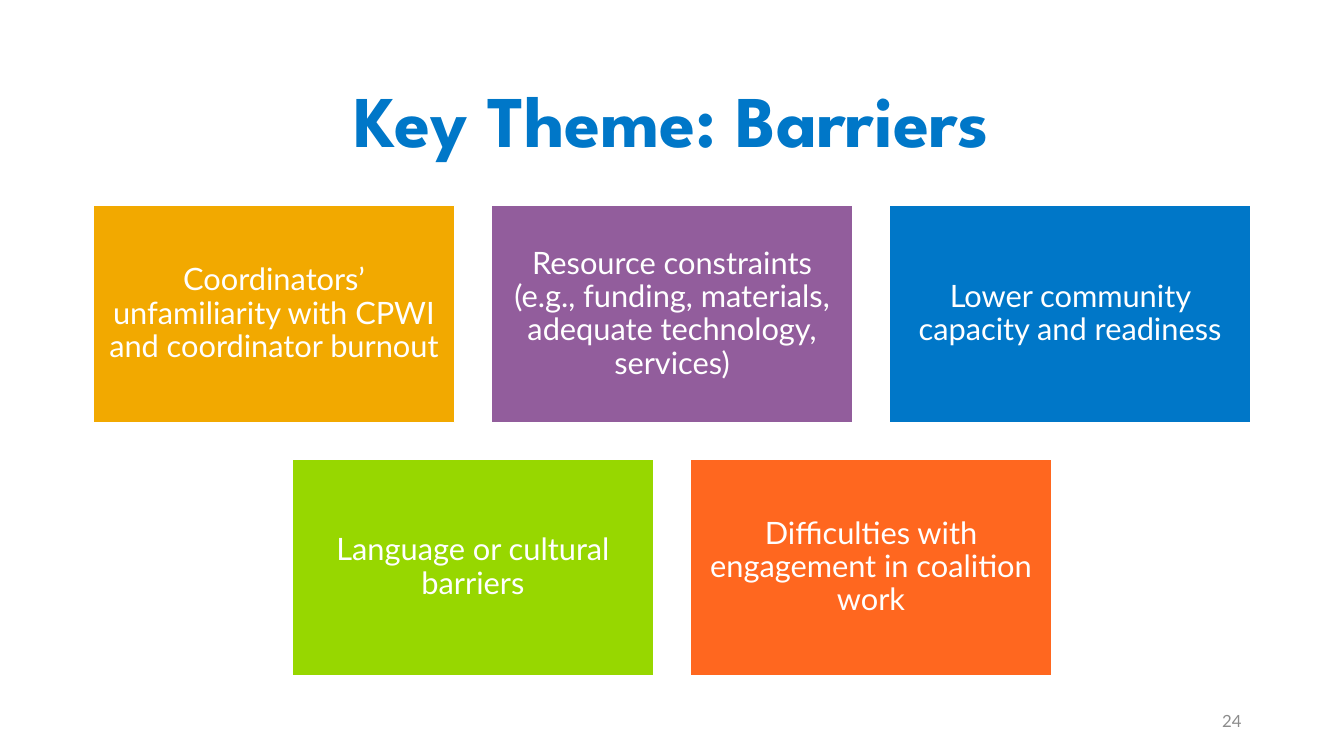
from dataclasses import dataclass

import pptx
import pptx.dml.color
import pptx.enum.shapes
import pptx.enum.text
import pptx.util

Pt = pptx.util.Pt
Align = pptx.enum.text.PP_ALIGN

SLIDE_WIDTH, SLIDE_HEIGHT = 960, 540
CARD_WIDTH, CARD_HEIGHT, CARD_GAP = 258.5, 155.1, 25.85
CARDS_TOP = 146.9
BLUE, WHITE, GRAY = "0077C8", "FFFFFF", "8C8C8C"


@dataclass
class Card:
    text: str
    fill: str


@dataclass
class TextStyle:
    font: str
    size: float
    color: str
    align: Align
    bold: bool = False
    line_spacing: float = 1.0


TITLE_STYLE = TextStyle("League Spartan", 52, BLUE, Align.CENTER, True, 0.9)
CARD_STYLE = TextStyle("Lato", 22, WHITE, Align.CENTER, line_spacing=0.9)
NUMBER_STYLE = TextStyle("Lato", 12, GRAY, Align.RIGHT)

CARD_ROWS = [
    [
        Card("Coordinators’ unfamiliarity with CPWI and coordinator burnout", "F2A900"),
        Card("Resource constraints (e.g., funding, materials, adequate technology, services)", "925D9C"),
        Card("Lower community capacity and readiness", BLUE),
    ],
    [
        Card("Language or cultural barriers", "97D700"),
        Card("Difficulties with engagement in coalition work", "FF671F"),
    ],
]


def rgb(color: str) -> pptx.dml.color.RGBColor:
    return pptx.dml.color.RGBColor.from_string(color)


def write_text(shape, text: str, style: TextStyle) -> None:
    frame = shape.text_frame
    frame.word_wrap = True
    frame.vertical_anchor = pptx.enum.text.MSO_ANCHOR.MIDDLE
    paragraph = frame.paragraphs[0]
    paragraph.text = text
    paragraph.alignment = style.align
    paragraph.line_spacing = style.line_spacing
    paragraph.font.name = style.font
    paragraph.font.size = Pt(style.size)
    paragraph.font.bold = style.bold
    paragraph.font.color.rgb = rgb(style.color)


def add_text(slide, left: float, top: float, width: float, height: float,
             text: str, style: TextStyle) -> None:
    box = slide.shapes.add_textbox(Pt(left), Pt(top), Pt(width), Pt(height))
    write_text(box, text, style)


def add_card(slide, left: float, top: float, card: Card) -> None:
    shape = slide.shapes.add_shape(
        pptx.enum.shapes.MSO_SHAPE.RECTANGLE,
        Pt(left), Pt(top), Pt(CARD_WIDTH), Pt(CARD_HEIGHT))
    shape.shadow.inherit = False
    shape.fill.solid()
    shape.fill.fore_color.rgb = rgb(card.fill)
    shape.line.color.rgb = rgb(WHITE)
    shape.line.width = Pt(1)
    frame = shape.text_frame
    frame.margin_left = frame.margin_right = Pt(6.6)
    frame.margin_top = frame.margin_bottom = Pt(6.6)
    write_text(shape, card.text, CARD_STYLE)


def add_card_row(slide, top: float, cards: list[Card]) -> None:
    """Place one row of cards, centred on the slide."""
    step = CARD_WIDTH + CARD_GAP
    left = (SLIDE_WIDTH - len(cards) * step + CARD_GAP) / 2
    for column, card in enumerate(cards):
        add_card(slide, left + column * step, top, card)


def main() -> None:
    presentation = pptx.Presentation()
    presentation.slide_width = Pt(SLIDE_WIDTH)
    presentation.slide_height = Pt(SLIDE_HEIGHT)
    slide = presentation.slides.add_slide(presentation.slide_layouts[6])

    # Title
    add_text(slide, 66, 44, 828, 89, "Key Theme: Barriers", TITLE_STYLE)

    # Barrier cards
    for row, cards in enumerate(CARD_ROWS):
        add_card_row(slide, CARDS_TOP + row * (CARD_HEIGHT + CARD_GAP), cards)

    # Slide number
    add_text(slide, 678, 500.5, 216, 28.8, "24", NUMBER_STYLE)

    presentation.save("out.pptx")


if __name__ == "__main__":
    main()
